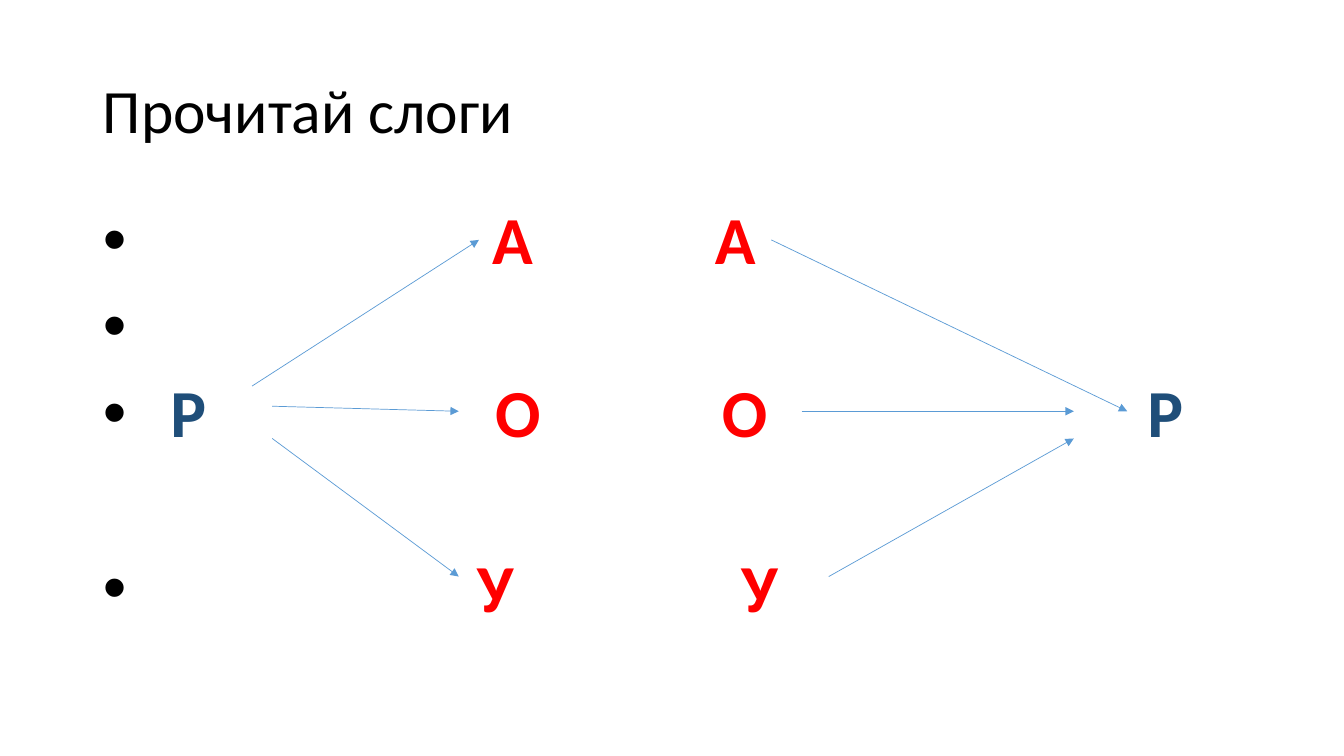
import pptx
import pptx.dml.color
import pptx.enum.text
import pptx.enum.shapes
import pptx.oxml.ns
import pptx.util
from lxml import etree

PX = 9144  # EMU per px, 100 px to the inch
COLORS = {"text": "000000", "vowel": "FF0000", "consonant": "1F4E79", "arrow": "5B9BD5"}
FONT = "Calibri"

TITLE_BOX = (92, 40, 1150, 145)
BODY_BOX = (92, 200, 1150, 476)

# Each row: space before in points, then (letter, kind, tab position in px)
ROWS = [
    (10, [("А", "vowel", 386), ("А", "vowel", 607)]),
    (10, [("", "text", 67)]),
    (10, [("Р", "consonant", 67), ("О", "vowel", 389),
          ("О", "vowel", 614), ("Р", "consonant", 1036)]),
    (73, [("У", "vowel", 371), ("У", "vowel", 633)]),
]

# Arrow ends in px from the top left corner of the body box
ARROWS = [
    (158, 183, 383, 38), (178, 203, 363, 208), (178, 235, 363, 372),
    (673, 38, 1026, 208), (703, 208, 973, 208), (730, 372, 973, 235),
]


def rgb(name):
    return pptx.dml.color.RGBColor.from_string(COLORS[name])


def add_child(parent, tag, **attributes):
    return etree.SubElement(parent, pptx.oxml.ns.qn(tag), attributes)


def place(shape, box):
    shape.left, shape.top, shape.width, shape.height = (PX * side for side in box)


def format_paragraph(para, size, space_before, bold):
    para.alignment = pptx.enum.text.PP_ALIGN.LEFT
    para.line_spacing = 0.9
    para.space_before = pptx.util.Pt(space_before)
    para.font.name = FONT
    para.font.size = pptx.util.Pt(size)
    para.font.bold = bold


def set_bullet_and_tabs(para, positions):
    """Give the paragraph a black bullet and left tab stops at the px positions."""
    properties = para._p.get_or_add_pPr()
    properties.set("marL", "0")
    properties.set("indent", "0")
    defaults = properties.find(pptx.oxml.ns.qn("a:defRPr"))
    add_child(add_child(properties, "a:buClr"), "a:srgbClr", val=COLORS["text"])
    add_child(properties, "a:buFont", typeface="Arial")
    add_child(properties, "a:buChar", char="•")
    stops = add_child(properties, "a:tabLst")
    for position in positions:
        add_child(stops, "a:tab", pos=str(position * PX), algn="l")
    properties.append(defaults)  # the schema wants the font defaults last


def fill_title(title, box):
    place(title, box)
    title.text_frame.text = "Прочитай слоги"
    title.text_frame.vertical_anchor = pptx.enum.text.MSO_ANCHOR.MIDDLE
    title.text_frame.auto_size = pptx.enum.text.MSO_AUTO_SIZE.NONE
    para = title.text_frame.paragraphs[0]
    format_paragraph(para, 44, 0, False)
    para.font.color.rgb = rgb("text")


def fill_letters(body, box):
    place(body, box)
    frame = body.text_frame
    frame.auto_size = pptx.enum.text.MSO_AUTO_SIZE.NONE
    for index, (space_before, letters) in enumerate(ROWS):
        para = frame.add_paragraph() if index else frame.paragraphs[0]
        format_paragraph(para, 48, space_before, True)
        set_bullet_and_tabs(para, [position for _, _, position in letters])
        for letter, kind, _ in letters:
            span = para.add_run()
            span.text = "\t" + letter
            span.font.color.rgb = rgb(kind)


def add_arrows(page, box):
    left, top = box[:2]
    for x1, y1, x2, y2 in ARROWS:
        arrow = page.shapes.add_connector(
            pptx.enum.shapes.MSO_CONNECTOR.STRAIGHT,
            PX * (left + x1), PX * (top + y1), PX * (left + x2), PX * (top + y2))
        arrow.line.color.rgb = rgb("arrow")
        arrow.line.width = pptx.util.Pt(0.5)
        add_child(arrow.line._get_or_add_ln(), "a:tailEnd", type="triangle")
        add_child(arrow._element.spPr, "a:effectLst")


def main():
    deck = pptx.Presentation()
    deck.slide_width, deck.slide_height = PX * 1333, PX * 750
    page = deck.slides.add_slide(deck.slide_layouts[1])
    fill_title(page.shapes.title, TITLE_BOX)
    fill_letters(page.placeholders[1], BODY_BOX)
    add_arrows(page, BODY_BOX)
    deck.save("out.pptx")


if __name__ == "__main__":
    main()
